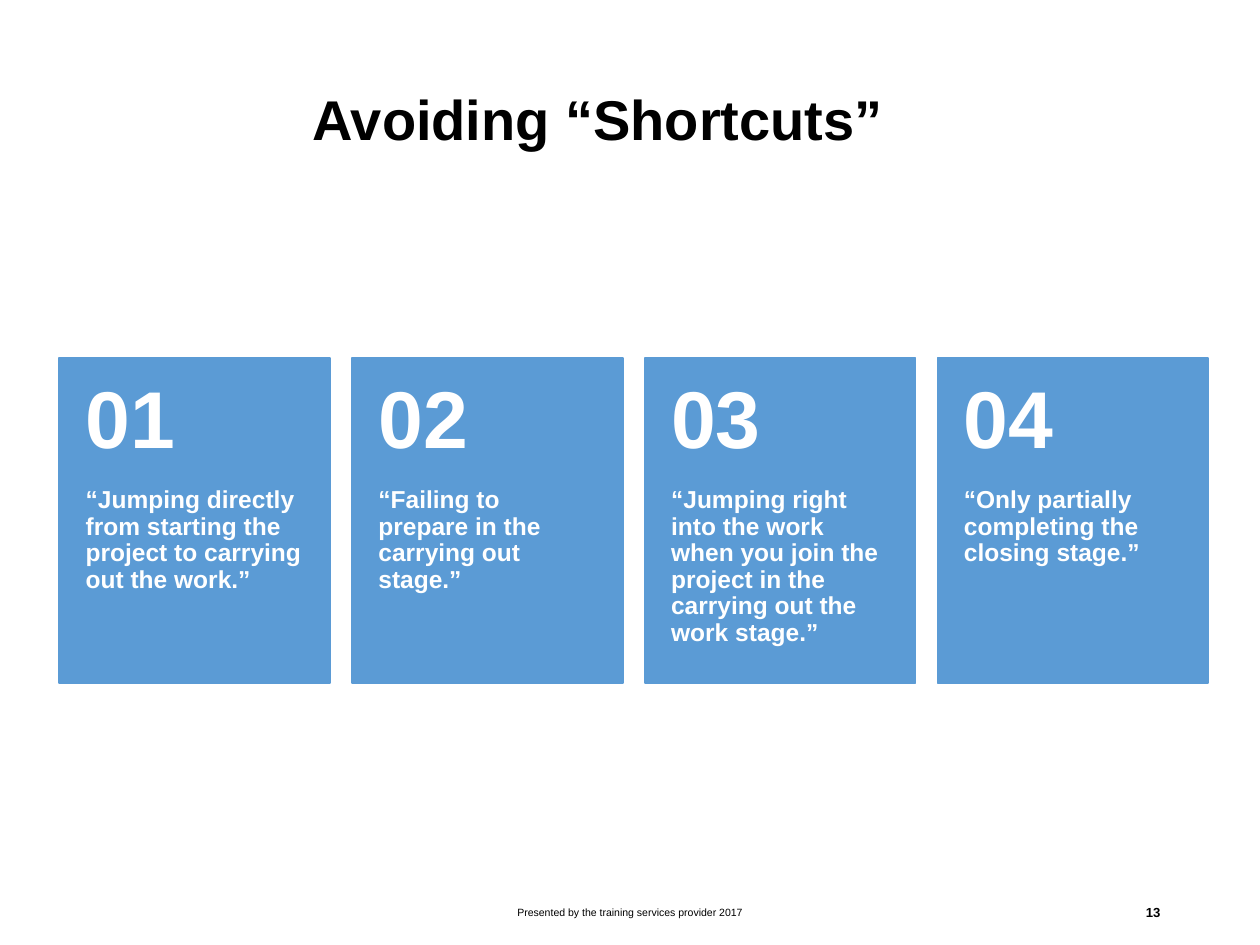
import pptx
import pptx.util
import pptx.dml.color
import pptx.enum.shapes
import pptx.enum.text

Inches = pptx.util.Inches
Pt = pptx.util.Pt
RGBColor = pptx.dml.color.RGBColor
ANCHOR = pptx.enum.text.MSO_ANCHOR
ALIGN = pptx.enum.text.PP_ALIGN

BLACK = RGBColor(0x00, 0x00, 0x00)
WHITE = RGBColor(0xFF, 0xFF, 0xFF)
BLUE = RGBColor(0x5B, 0x9B, 0xD5)

CARD_TOP, CARD_W, CARD_H = 2.84, 2.15, 2.58
NUMBER_H = 1.03
FIRST_LEFT, LAST_LEFT = 0.47, 7.44
DEFAULT_INSETS = (0.1, 0.05, 0.1, 0.05)

SHORTCUTS = [
    "“Jumping directly from starting the project to carrying out the work.”",
    "“Failing to prepare in the carrying out stage.”",
    "“Jumping right into the work when you join the project in the "
    "carrying out the work stage.”",
    "“Only partially completing the closing stage.”",
]


def set_text(sp, text, size, color=BLACK, bold=False, align=ALIGN.LEFT,
             anchor=ANCHOR.MIDDLE, insets=DEFAULT_INSETS, line_spacing=1.0):
    tf = sp.text_frame
    left, top, right, bottom = (Inches(v) for v in insets)
    frame_format = {
        "word_wrap": True,
        "auto_size": pptx.enum.text.MSO_AUTO_SIZE.NONE,
        "vertical_anchor": anchor,
        "margin_left": left,
        "margin_top": top,
        "margin_right": right,
        "margin_bottom": bottom,
    }
    for name, value in frame_format.items():
        setattr(tf, name, value)
    p = tf.paragraphs[0]
    p.alignment = align
    p.line_spacing = line_spacing
    r = p.add_run()
    r.text = text
    for name, value in {"name": "Arial", "size": Pt(size), "bold": bold}.items():
        setattr(r.font, name, value)
    r.font.color.rgb = color


def add_text(s, box, text, size, **text_format):
    sp = s.shapes.add_textbox(*(Inches(v) for v in box))
    set_text(sp, text, size, **text_format)


def add_title(s, box, text):
    sp = s.shapes.title
    for name, value in zip(("left", "top", "width", "height"), box):
        setattr(sp, name, Inches(value))
    set_text(sp, text, 32, bold=True, line_spacing=0.9)


def add_card(s, left, number, text):
    """Add a blue card with a large number above its text."""
    sp = s.shapes.add_shape(
        pptx.enum.shapes.MSO_SHAPE.RECTANGLE,
        Inches(left), Inches(CARD_TOP), Inches(CARD_W), Inches(CARD_H))
    sp.shadow.inherit = False
    sp.fill.solid()
    sp.fill.fore_color.rgb = BLUE
    sp.line.color.rgb = BLUE
    sp.line.width = Pt(1)
    card_format = {"color": WHITE, "bold": True, "line_spacing": 0.9}
    add_text(s, (left, CARD_TOP + NUMBER_H, CARD_W, CARD_H - NUMBER_H), text, 14,
             anchor=ANCHOR.TOP, insets=(0.21, 0, 0.21, 0.36), **card_format)
    add_text(s, (left, CARD_TOP, CARD_W, NUMBER_H), f"{number:02d}", 46,
             insets=(0.21, 0.18, 0.21, 0.18), **card_format)


def main():
    prs = pptx.Presentation()
    prs.slide_width, prs.slide_height = Inches(10), Inches(7.5)
    s = prs.slides.add_slide(prs.slide_layouts[5])
    add_title(s, (2.38, 0.43, 8.62, 1.09), "Avoiding “Shortcuts”")
    pitch = (LAST_LEFT - FIRST_LEFT) / (len(SHORTCUTS) - 1)
    for i, text in enumerate(SHORTCUTS):
        add_card(s, FIRST_LEFT + i * pitch, i + 1, text)
    add_text(s, (3.31, 7.04, 3.38, 0.4),
             "Presented by the training services provider 2017", 6,
             align=ALIGN.CENTER)
    add_text(s, (7.06, 7.04, 2.25, 0.4), "13", 7.5, bold=True, align=ALIGN.RIGHT)
    prs.save("out.pptx")


if __name__ == "__main__":
    main()
